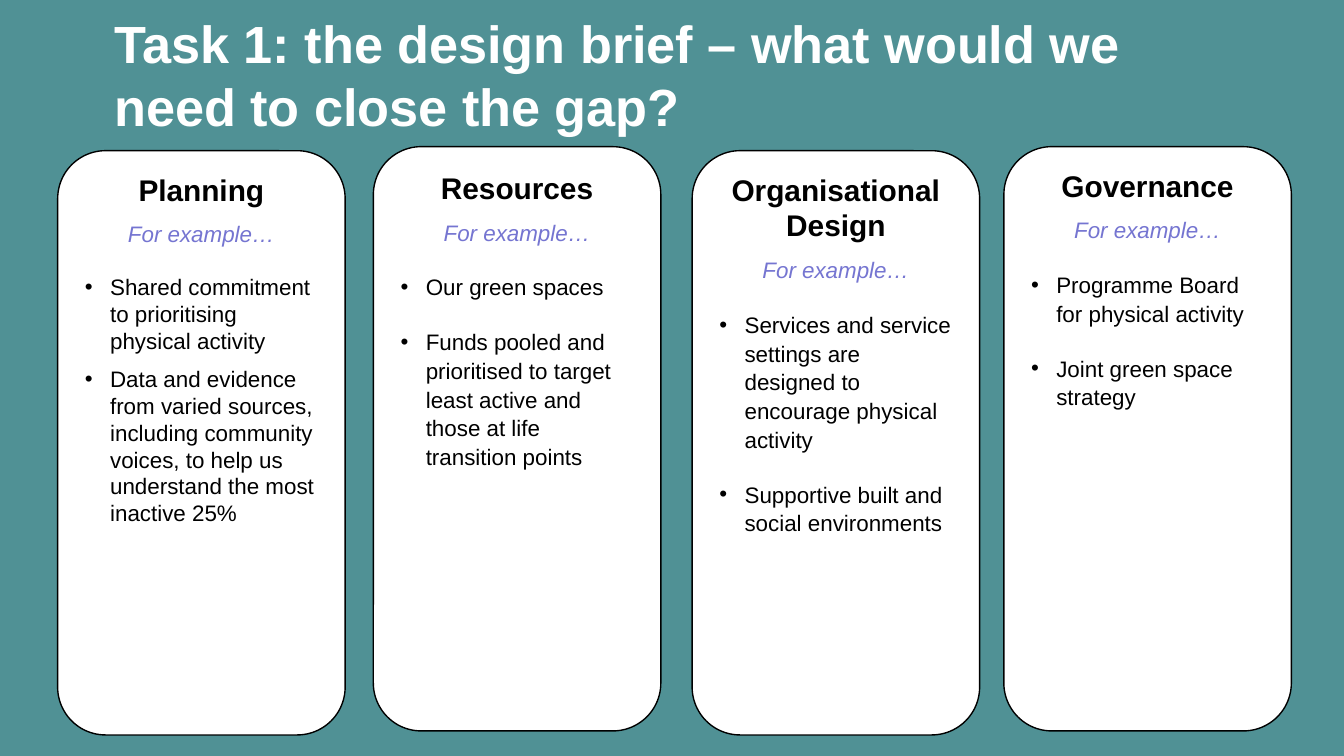
"""Build the design brief slide with its four cards."""
from lxml.etree import SubElement
from pptx import Presentation
from pptx.dml.color import RGBColor
from pptx.enum.shapes import MSO_SHAPE
from pptx.enum.text import MSO_ANCHOR, MSO_AUTO_SIZE, PP_ALIGN
from pptx.oxml.ns import qn
from pptx.util import Pt

HUES = {"back": "509195", "card": "FFFFFF", "text": "000000", "hint": "7575D1"}
FACE = "Arial"
WIDE, HIGH = 154, 313
INDENT = 13.5
LOOSE = 1.07

CARDS = [
    dict(left=30.9, top=80.75, name="Planning", step=None, after=0, items=[
        "Shared commitment to prioritising physical activity",
        "Data and evidence from varied sources, including community voices, "
        "to help us understand the most inactive 25%"]),
    dict(left=200, top=78.6, name="Resources", lead=LOOSE, items=[
        "Our green spaces",
        "Funds pooled and prioritised to target least active and those at "
        "life transition points"]),
    dict(left=370.8, top=80.75, name="Organisational Design", items=[
        "Services and service settings are designed to encourage physical activity",
        "Supportive built and social environments"]),
    dict(left=537.8, top=78.6, name="Governance", items=[
        "Programme Board for physical activity",
        "Joint green space strategy"]),
]


class Deck:
    def __init__(self):
        self.show = Presentation()
        self.show.slide_width, self.show.slide_height = Pt(720), Pt(405)
        self.slide = self.show.slides.add_slide(self.show.slide_layouts[5])
        fill = self.slide.background.fill
        fill.solid()
        fill.fore_color.rgb = self.hue("back")

    def hue(self, key):
        return RGBColor.from_string(HUES[key])

    def style(self, para, size, key, bold=False, italic=False):
        font = para.font
        font.name, font.size = FACE, Pt(size)
        font.bold, font.italic = bold, italic
        font.color.rgb = self.hue(key)

    def title(self, text):
        shape = self.slide.shapes.title
        shape.left, shape.top = Pt(54), Pt(17.3)
        shape.width, shape.height = Pt(612), Pt(44.6)
        frame = shape.text_frame
        frame.text = text
        frame.word_wrap = True
        frame.auto_size = MSO_AUTO_SIZE.NONE
        frame.vertical_anchor = MSO_ANCHOR.MIDDLE
        para = frame.paragraphs[0]
        para.alignment = PP_ALIGN.LEFT
        self.style(para, 28, "card", bold=True)

    def line(self, frame, text, step, after):
        para = frame.add_paragraph()
        para.text = text
        para.line_spacing = step
        para.space_before, para.space_after = Pt(6), Pt(after)
        return para

    def bullet(self, para):
        para.alignment = PP_ALIGN.LEFT
        props = para._p.get_or_add_pPr()
        props.set("marL", str(Pt(INDENT)))
        props.set("indent", str(-Pt(INDENT)))
        SubElement(props, qn("a:buFont")).set("typeface", FACE)
        SubElement(props, qn("a:buChar")).set("char", "•")

    def card(self, left, top, name, items, lead=None, step=LOOSE, after=8):
        shape = self.slide.shapes.add_shape(
            MSO_SHAPE.ROUNDED_RECTANGLE, Pt(left), Pt(top), Pt(WIDE), Pt(HIGH))
        shape.shadow.inherit = False
        shape.fill.solid()
        shape.fill.fore_color.rgb = self.hue("card")
        shape.line.color.rgb = self.hue("text")
        shape.line.width = Pt(0.75)
        frame = shape.text_frame
        frame.word_wrap = True
        frame.vertical_anchor = MSO_ANCHOR.TOP
        head = frame.paragraphs[0]
        head.text = name
        head.line_spacing = lead
        head.alignment = PP_ALIGN.CENTER
        self.style(head, 16, "text", bold=True)
        hint = self.line(frame, "For example…", LOOSE, 8)
        hint.alignment = PP_ALIGN.CENTER
        self.style(hint, 12, "hint", italic=True)
        for item in items:
            para = self.line(frame, item, step, after)
            self.bullet(para)
            self.style(para, 12, "text")


def main():
    deck = Deck()
    deck.title("Task 1: the design brief – what would we need to close the gap?")
    for card in CARDS:
        deck.card(**card)
    deck.show.save("out.pptx")


if __name__ == "__main__":
    main()
